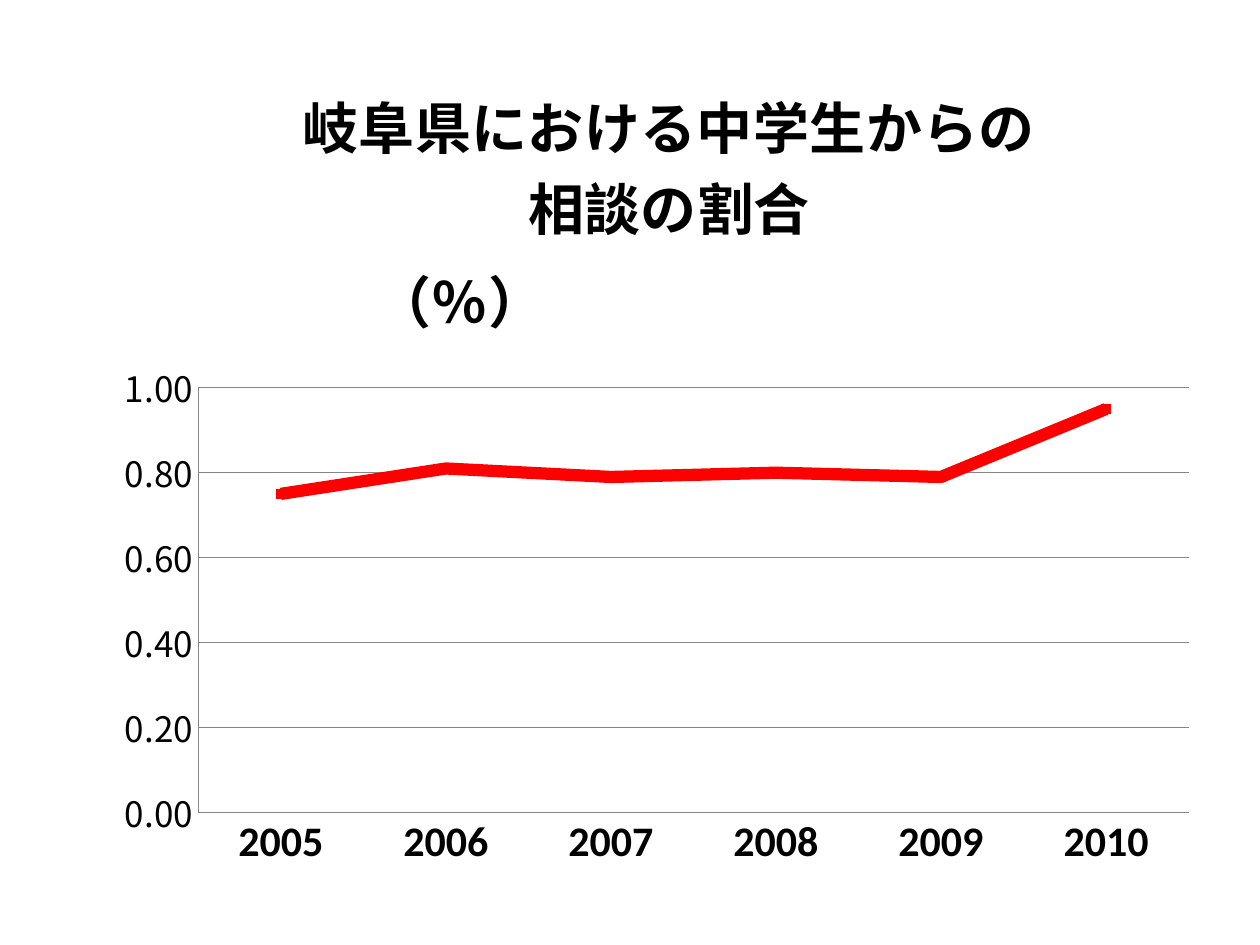
import dataclasses

import pptx
import pptx.chart.data
import pptx.dml.color
import pptx.enum.chart
import pptx.oxml
import pptx.oxml.ns
import pptx.util
from pptx.util import Cm


@dataclasses.dataclass(frozen=True)
class Theme:
    text: str = "000000"
    axis: str = "868686"
    series: str = "FF0000"
    latin_font: str = "Calibri"
    japanese_font: str = "Noto Sans CJK JP"
    base_size: int = 10
    title_size: int = 32
    category_size: int = 24
    value_size: int = 20
    series_width: float = 7
    axis_width: float = 0.75
    marker_size: int = 5


THEME = Theme()
YEARS = ["2005", "2006", "2007", "2008", "2009", "2010"]
RATES = [0.75, 0.81, 0.79, 0.80, 0.79, 0.95]
TITLE_LINES = ["岐阜県における中学生からの", "相談の割合"]
UNIT = "（％）"


def color(value):
    return pptx.dml.color.RGBColor.from_string(value)


def style_font(font, size, name, bold=False):
    font.size = pptx.util.Pt(size)
    font.name = name
    font.bold = bold
    font.color.rgb = color(THEME.text)


def style_line(line, value, width):
    line.color.rgb = color(value)
    line.width = pptx.util.Pt(width)


def place(element, **fractions):
    for layout in element.findall(pptx.oxml.ns.qn("c:layout")):
        element.remove(layout)
    target = '<c:layoutTarget val="inner"/>' if "w" in fractions else ""
    modes = "".join(f'<c:{key}Mode val="edge"/>' for key in ("x", "y"))
    values = "".join(f'<c:{key} val="{value}"/>' for key, value in fractions.items())
    layout = pptx.oxml.parse_xml(
        f'<c:layout {pptx.oxml.ns.nsdecls("c")}><c:manualLayout>'
        f"{target}{modes}{values}</c:manualLayout></c:layout>"
    )
    text = element.find(pptx.oxml.ns.qn("c:tx"))
    if text is None:
        element.insert(0, layout)
    else:
        text.addnext(layout)


def write_title(title, lines, x, y):
    frame = title.text_frame
    for index, line in enumerate(lines):
        paragraph = frame.add_paragraph() if index else frame.paragraphs[0]
        run = paragraph.add_run()
        run.text = line
        style_font(run.font, THEME.title_size, THEME.latin_font, True)
    place(title._element, x=x, y=y)


def style_axis(axis, size, name, bold=False):
    axis.major_tick_mark = pptx.enum.chart.XL_TICK_MARK.NONE
    axis.minor_tick_mark = pptx.enum.chart.XL_TICK_MARK.NONE
    style_font(axis.tick_labels.font, size, name, bold)
    style_line(axis.format.line, THEME.axis, THEME.axis_width)


def style_value_axis(axis):
    style_axis(axis, THEME.value_size, THEME.japanese_font)
    axis.minimum_scale, axis.maximum_scale, axis.major_unit = 0, 1, 0.2
    axis.tick_labels.number_format = r"#,##0.00;[Red]\-#,##0.00"
    axis.tick_labels.number_format_is_linked = False
    axis.has_major_gridlines = True
    style_line(axis.major_gridlines.format.line, THEME.axis, THEME.axis_width)
    write_title(axis.axis_title, [UNIT], 0.24, 0.21)
    body = axis.axis_title.text_frame._txBody.find(pptx.oxml.ns.qn("a:bodyPr"))
    body.set("rot", "0")
    body.set("vert", "horz")


def style_series(series):
    series.smooth = False
    style_line(series.format.line, THEME.series, THEME.series_width)
    marker = series.marker
    marker.style = pptx.enum.chart.XL_MARKER_STYLE.SQUARE
    marker.size = THEME.marker_size
    marker.format.fill.solid()
    marker.format.fill.fore_color.rgb = color(THEME.series)
    marker.format.line.color.rgb = color(THEME.series)


def add_rate_chart(slide):
    data = pptx.chart.data.CategoryChartData(number_format="0.00")
    data.categories = YEARS
    data.add_series("Series 1", RATES)
    chart = slide.shapes.add_chart(
        pptx.enum.chart.XL_CHART_TYPE.LINE_MARKERS,
        Cm(1.98), Cm(1.4), Cm(22.43), Cm(16.46), data,
    ).chart
    style_font(chart.font, THEME.base_size, THEME.latin_font)
    chart.has_legend = False
    chart.plots[0].vary_by_categories = False
    write_title(chart.chart_title, TITLE_LINES, 0.18, 0.01)
    style_axis(chart.category_axis, THEME.category_size, THEME.latin_font, True)
    style_value_axis(chart.value_axis)
    style_series(chart.plots[0].series[0])
    plot_area = chart._chartSpace.chart.plotArea
    place(plot_area, x=0.09, y=0.39, w=0.89, h=0.52)


def main():
    presentation = pptx.Presentation()
    presentation.slide_width = Cm(25.4)
    presentation.slide_height = Cm(19.05)
    slide = presentation.slides.add_slide(presentation.slide_layouts[6])
    add_rate_chart(slide)
    presentation.save("out.pptx")


if __name__ == "__main__":
    main()
